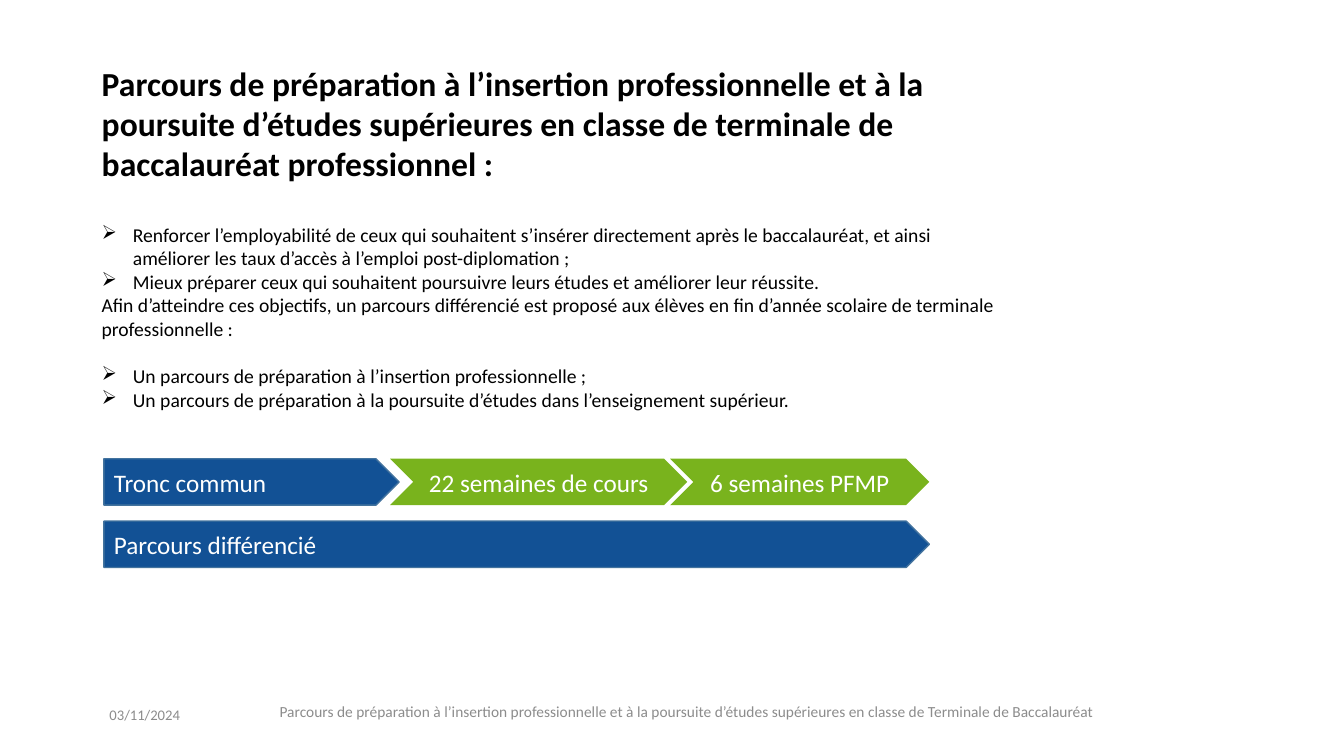
from lxml import etree
from pptx import Presentation
from pptx.dml.color import RGBColor
from pptx.enum.shapes import MSO_SHAPE
from pptx.enum.text import MSO_ANCHOR, MSO_AUTO_SIZE, PP_ALIGN
from pptx.oxml.ns import qn
from pptx.util import Cm, Pt

BLACK = RGBColor(0x00, 0x00, 0x00)
WHITE = RGBColor(0xFF, 0xFF, 0xFF)
GREY = RGBColor(0x8C, 0x8C, 0x8C)
BLUE = RGBColor(0x12, 0x51, 0x95)
BLUE_EDGE = RGBColor(0x43, 0x73, 0x9E)
GREEN = RGBColor(0x79, 0xB3, 0x1D)
PLATE, CHEVRON = MSO_SHAPE.PENTAGON, MSO_SHAPE.CHEVRON
TOP, MIDDLE = MSO_ANCHOR.TOP, MSO_ANCHOR.MIDDLE
LEFT, CENTER = PP_ALIGN.LEFT, PP_ALIGN.CENTER


def write(frame, lines, size, color, align=LEFT, anchor=TOP, bold=False):
    """Fill a text frame with one paragraph per line, all in one style."""
    frame.text = "\n".join(lines)
    frame.word_wrap = True
    frame.auto_size = MSO_AUTO_SIZE.NONE
    frame.vertical_anchor = anchor
    for para in frame.paragraphs:
        para.alignment = align
        for span in para.runs:
            span.font.name = "Calibri"
            span.font.size = Pt(size)
            span.font.bold = bold
            span.font.color.rgb = color


deck = Presentation()
deck.slide_width, deck.slide_height = Cm(33.87), Cm(19.05)
page = deck.slides.add_slide(deck.slide_layouts[5])

# Title
title = page.shapes.title
title.left, title.top, title.width, title.height = Cm(2.31), Cm(1.45), Cm(23.27), Cm(4.37)
write(title.text_frame, [
    "Parcours de préparation à l’insertion professionnelle et à la poursuite "
    "d’études supérieures en classe de terminale de baccalauréat professionnel :"
], 24, BLACK, bold=True)

# Objectives and the two paths
body_lines = [
    (True, "Renforcer l’employabilité de ceux qui souhaitent s’insérer directement après "
           "le baccalauréat, et ainsi améliorer les taux d’accès à l’emploi post-diplomation ;"),
    (True, "Mieux préparer ceux qui souhaitent poursuivre leurs études et améliorer leur réussite."),
    (False, "Afin d’atteindre ces objectifs, un parcours différencié est proposé aux élèves "
            "en fin d’année scolaire de terminale professionnelle :"),
    (True, "Un parcours de préparation à l’insertion professionnelle ;"),
    (True, "Un parcours de préparation à la poursuite d’études dans l’enseignement supérieur."),
]
body = page.shapes.add_textbox(Cm(2.31), Cm(5.49), Cm(23.29), Cm(5.05)).text_frame
write(body, [line for _, line in body_lines], 14, BLACK)
for para, (bulleted, _) in zip(body.paragraphs, body_lines):
    if bulleted:
        properties = para._p.get_or_add_pPr()
        properties.set("marL", str(Cm(0.79)))
        properties.set("indent", str(-Cm(0.79)))
        etree.SubElement(properties, qn("a:buChar")).set("char", "➢")
body.paragraphs[3].space_before = Pt(17)

# Course arrows: shape, left, top, width, label
arrows = [
    (PLATE, 2.62, 11.56, 7.44, "Tronc commun"),
    (PLATE, 2.62, 13.13, 20.8, "Parcours différencié"),
    (CHEVRON, 9.83, 11.56, 7.49, "22 semaines de cours"),
    (CHEVRON, 16.89, 11.56, 6.53, "6 semaines PFMP"),
]
for kind, left, top, width, label in arrows:
    arrow = page.shapes.add_shape(kind, Cm(left), Cm(top), Cm(width), Cm(1.17))
    arrow.shadow.inherit = False
    arrow.fill.solid()
    if kind == PLATE:
        arrow.fill.fore_color.rgb = BLUE
        arrow.line.color.rgb = BLUE_EDGE
        arrow.line.width = Pt(1)
    else:
        arrow.fill.fore_color.rgb = GREEN
        arrow.line.fill.background()
    write(arrow.text_frame, [label], 18, WHITE, LEFT if kind == PLATE else CENTER, MIDDLE)

# Date and footer
date = page.shapes.add_textbox(Cm(2.51), Cm(17.65), Cm(3.33), Cm(1.02))
write(date.text_frame, ["03/11/2024"], 10.5, GREY)
footer = page.shapes.add_textbox(Cm(6.38), Cm(17.65), Cm(21.87), Cm(1.02))
write(footer.text_frame, [
    "Parcours de préparation à l’insertion professionnelle et à la poursuite "
    "d’études supérieures en classe de Terminale de Baccalauréat"
], 11, GREY, CENTER)
footer.text_frame.margin_top = Cm(0.05)

deck.save("out.pptx")
